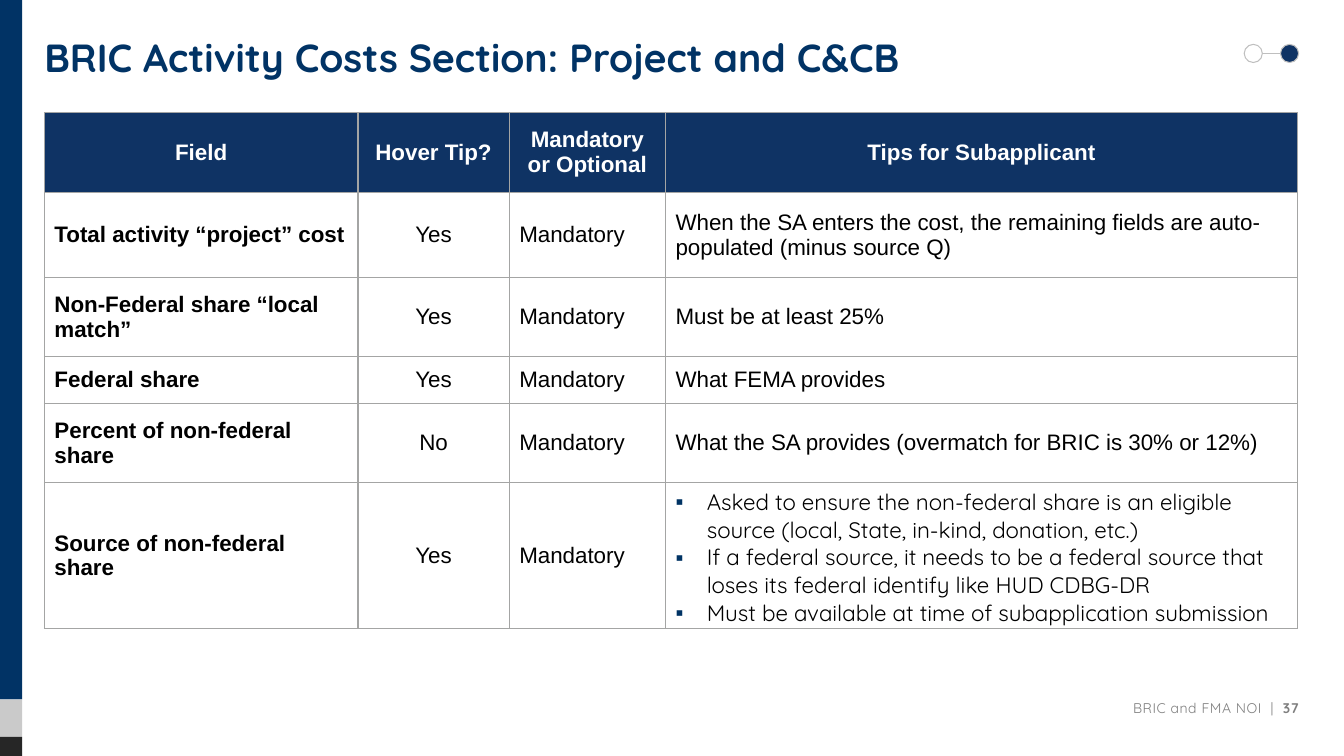
from dataclasses import dataclass
from typing import Any

from lxml import etree
from pptx import Presentation
from pptx.dml.color import RGBColor
from pptx.enum.shapes import MSO_CONNECTOR, MSO_SHAPE
from pptx.enum.text import MSO_ANCHOR, PP_ALIGN
from pptx.oxml.ns import qn
from pptx.util import Inches, Pt

LEFT, CENTER, RIGHT = PP_ALIGN.LEFT, PP_ALIGN.CENTER, PP_ALIGN.RIGHT
TOP, MIDDLE = MSO_ANCHOR.TOP, MSO_ANCHOR.MIDDLE
RECTANGLE, OVAL = MSO_SHAPE.RECTANGLE, MSO_SHAPE.OVAL
STRAIGHT = MSO_CONNECTOR.STRAIGHT


@dataclass(frozen=True)
class Theme:
    brand: str = "013365"
    navy: str = "0F3364"
    silver: str = "CACACA"
    charcoal: str = "262626"
    white: str = "FFFFFF"
    black: str = "000000"
    footer: str = "7F7F7F"
    border: str = "A4A5A4"
    outline: str = "BFBFBF"
    bullet: str = "003364"
    display_font: str = "Quicksand"
    table_font: str = "Arial"
    title_size: float = 28
    table_size: float = 16
    footer_size: float = 10
    hairline: float = 0.75


@dataclass(frozen=True)
class Box:
    left: float
    top: float
    width: float
    height: float

    def lengths(self) -> list[int]:
        return [Inches(n) for n in (self.left, self.top, self.width, self.height)]


@dataclass(frozen=True)
class Figure:
    kind: Any
    box: Box
    fill: str
    outline: str = ""


@dataclass(frozen=True)
class Style:
    font: str
    size: float
    color: str
    bold: bool = False
    align: Any = LEFT
    bulleted: bool = False


@dataclass(frozen=True)
class FieldRow:
    height: float
    name: str
    hover_tip: str
    requirement: str
    tips: tuple[str, ...]


THEME = Theme()
BAR_WIDTH = 0.22
DOT_SIZE = 0.18
DOT_TOP = 0.44
DOT_LEFTS = (12.34, 12.7)
FIGURES = [
    Figure(RECTANGLE, Box(0, 0, BAR_WIDTH, 6.94), THEME.brand),
    Figure(RECTANGLE, Box(0, 6.94, BAR_WIDTH, 0.37), THEME.silver),
    Figure(RECTANGLE, Box(0, 7.31, BAR_WIDTH, 0.19), THEME.charcoal),
    Figure(OVAL, Box(DOT_LEFTS[0], DOT_TOP, DOT_SIZE, DOT_SIZE), THEME.white, THEME.outline),
    Figure(OVAL, Box(DOT_LEFTS[1], DOT_TOP, DOT_SIZE, DOT_SIZE), THEME.navy, THEME.outline),
]
COLUMN_WIDTHS = (3.11, 1.5, 1.55, 6.27)
HEADER = FieldRow(0.79, "Field", "Hover Tip?", "Mandatory or Optional", ("Tips for Subapplicant",))
FIELD_ROWS = [
    FieldRow(0.84, "Total activity “project” cost", "Yes", "Mandatory",
             ("When the SA enters the cost, the remaining fields are auto-populated (minus source Q)",)),
    FieldRow(0.79, "Non-Federal share “local match”", "Yes", "Mandatory", ("Must be at least 25%",)),
    FieldRow(0.46, "Federal share", "Yes", "Mandatory", ("What FEMA provides",)),
    FieldRow(0.79, "Percent of non-federal share", "No", "Mandatory",
             ("What the SA provides (overmatch for BRIC is 30% or 12%)",)),
    FieldRow(1.45, "Source of non-federal share", "Yes", "Mandatory",
             ("Asked to ensure the non-federal share is an eligible source "
              "(local, State, in-kind, donation, etc.)",
              "If a federal source, it needs to be a federal source that loses its "
              "federal identify like HUD CDBG-DR",
              "Must be available at time of subapplication submission")),
]


def color(value: str) -> RGBColor:
    return RGBColor.from_string(value)


def add_bullet(paragraph: Any) -> None:
    properties = paragraph._p.get_or_add_pPr()
    properties.set("marL", str(Inches(0.31)))
    properties.set("indent", str(Inches(-0.31)))
    tint = etree.SubElement(properties, qn("a:buClr"))
    etree.SubElement(tint, qn("a:srgbClr"), val=THEME.bullet)
    etree.SubElement(properties, qn("a:buFont"), typeface=THEME.table_font)
    etree.SubElement(properties, qn("a:buChar"), char="▪")


def style_paragraph(paragraph: Any, style: Style) -> None:
    if style.bulleted:
        add_bullet(paragraph)
    paragraph.alignment = style.align
    font = paragraph.font
    font.name, font.size, font.bold = style.font, Pt(style.size), style.bold
    font.color.rgb = color(style.color)


def add_figure(page: Any, figure: Figure) -> None:
    shape = page.shapes.add_shape(figure.kind, *figure.box.lengths())
    shape.shadow.inherit = False
    shape.fill.solid()
    shape.fill.fore_color.rgb = color(figure.fill)
    if figure.outline:
        shape.line.color.rgb = color(figure.outline)
        shape.line.width = Pt(THEME.hairline)
    else:
        shape.line.fill.background()


def add_dot_link(page: Any) -> None:
    middle = Inches(DOT_TOP + DOT_SIZE / 2)
    link = page.shapes.add_connector(
        STRAIGHT, Inches(DOT_LEFTS[0] + DOT_SIZE), middle, Inches(DOT_LEFTS[1]), middle)
    link.line.color.rgb = color(THEME.outline)
    link.line.width = Pt(THEME.hairline)
    etree.SubElement(link._element.spPr, qn("a:effectLst"))


def add_text(page: Any, box: Box, style: Style, anchor: Any, spans: tuple[str, ...]) -> list[Any]:
    frame = page.shapes.add_textbox(*box.lengths()).text_frame
    frame.word_wrap = True
    frame.margin_left = frame.margin_right = 0
    frame.vertical_anchor = anchor
    paragraph = frame.paragraphs[0]
    style_paragraph(paragraph, style)
    runs = []
    for words in spans:
        span = paragraph.add_run()
        span.text = words
        runs.append(span)
    return runs


def fill_cell(cell: Any, lines: tuple[str, ...], style: Style, fill: str) -> None:
    properties = cell._tc.get_or_add_tcPr()
    for side in ("lnL", "lnR", "lnT", "lnB"):
        edge = etree.SubElement(properties, qn(f"a:{side}"), w=str(Pt(1)))
        paint = etree.SubElement(edge, qn("a:solidFill"))
        etree.SubElement(paint, qn("a:srgbClr"), val=THEME.border)
    cell.fill.solid()
    cell.fill.fore_color.rgb = color(fill)
    cell.vertical_anchor = MIDDLE
    cell.text = "\n".join(lines)
    for paragraph in cell.text_frame.paragraphs:
        style_paragraph(paragraph, style)


def add_field_table(page: Any) -> None:
    rows = [HEADER, *FIELD_ROWS]
    box = Box(0.44, 1.12, sum(COLUMN_WIDTHS), sum(row.height for row in rows))
    table = page.shapes.add_table(len(rows), len(COLUMN_WIDTHS), *box.lengths()).table
    table.horz_banding = False
    for column, width in zip(table.columns, COLUMN_WIDTHS):
        column.width = Inches(width)
    for index, row in enumerate(rows):
        table.rows[index].height = Inches(row.height)
        heading, listed = row is HEADER, len(row.tips) > 1
        contents = ((row.name,), (row.hover_tip,), (row.requirement,), row.tips)
        for position, lines in enumerate(contents):
            bulleted = listed and lines is row.tips
            style = Style(
                THEME.display_font if bulleted else THEME.table_font, THEME.table_size,
                THEME.white if heading else THEME.black, heading or position == 0,
                CENTER if heading or position == 1 else LEFT, bulleted)
            fill_cell(table.cell(index, position), lines, style, THEME.navy if heading else THEME.white)


def main() -> None:
    """Build the activity costs slide and save it."""
    deck = Presentation()
    deck.slide_width, deck.slide_height = Inches(13.33), Inches(7.5)
    page = deck.slides.add_slide(deck.slide_layouts[6])
    title = Style(THEME.display_font, THEME.title_size, THEME.brand, bold=True)
    add_text(page, Box(0.44, 0.28, 12.43, 0.84), title, TOP,
             ("BRIC Activity Costs Section: Project and C&CB",))
    add_field_table(page)
    footer = Style(THEME.display_font, THEME.footer_size, THEME.footer, align=RIGHT)
    spans = add_text(page, Box(4.79, 6.88, 8.09, 0.29), footer, MIDDLE, ("BRIC and FMA NOI  |  ", "37"))
    spans[-1].font.bold = True
    for span in spans:
        span._r.get_or_add_rPr().set("spc", "40")
    add_dot_link(page)
    for figure in FIGURES:
        add_figure(page, figure)


    deck.save("out.pptx")


if __name__ == "__main__":
    main()
